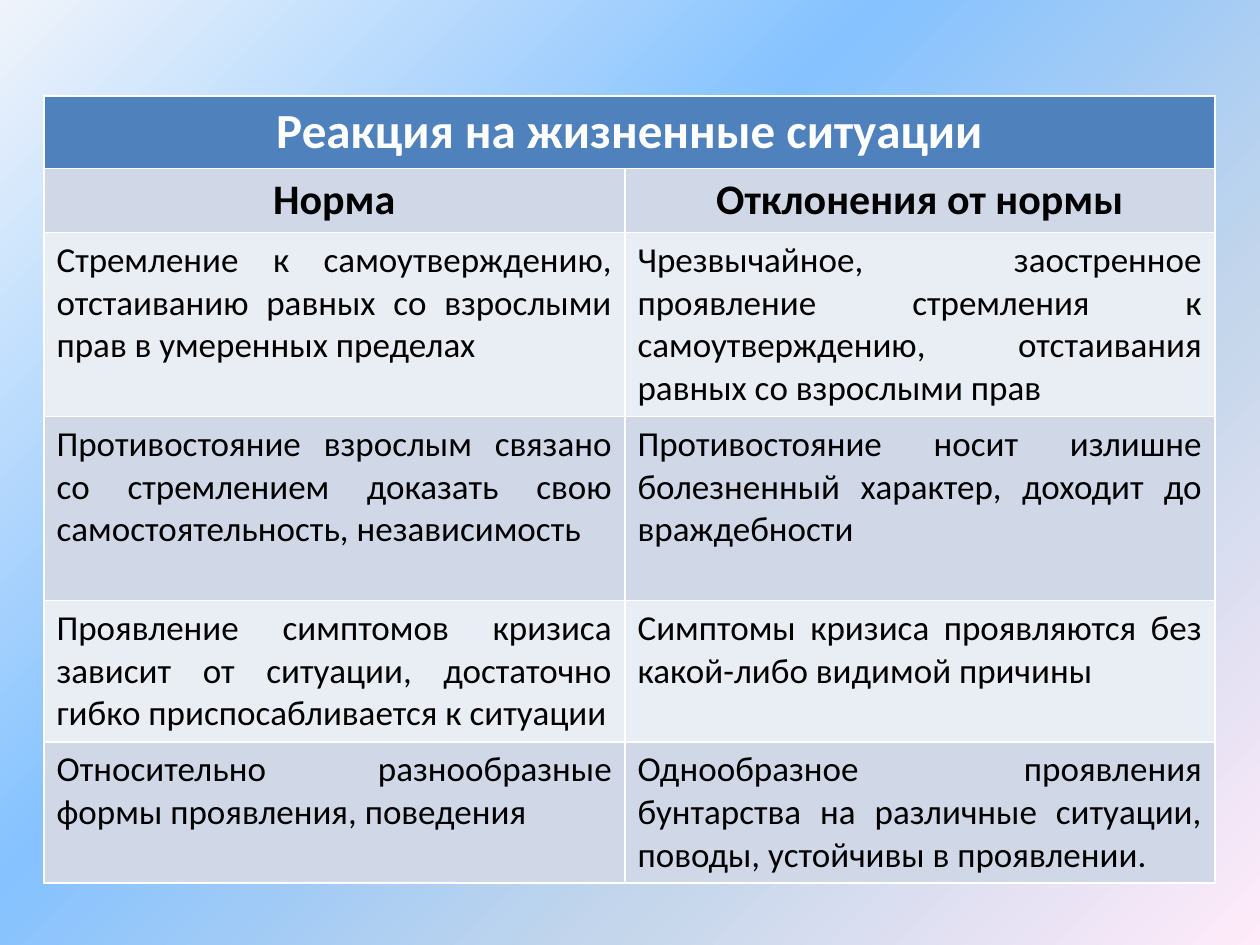
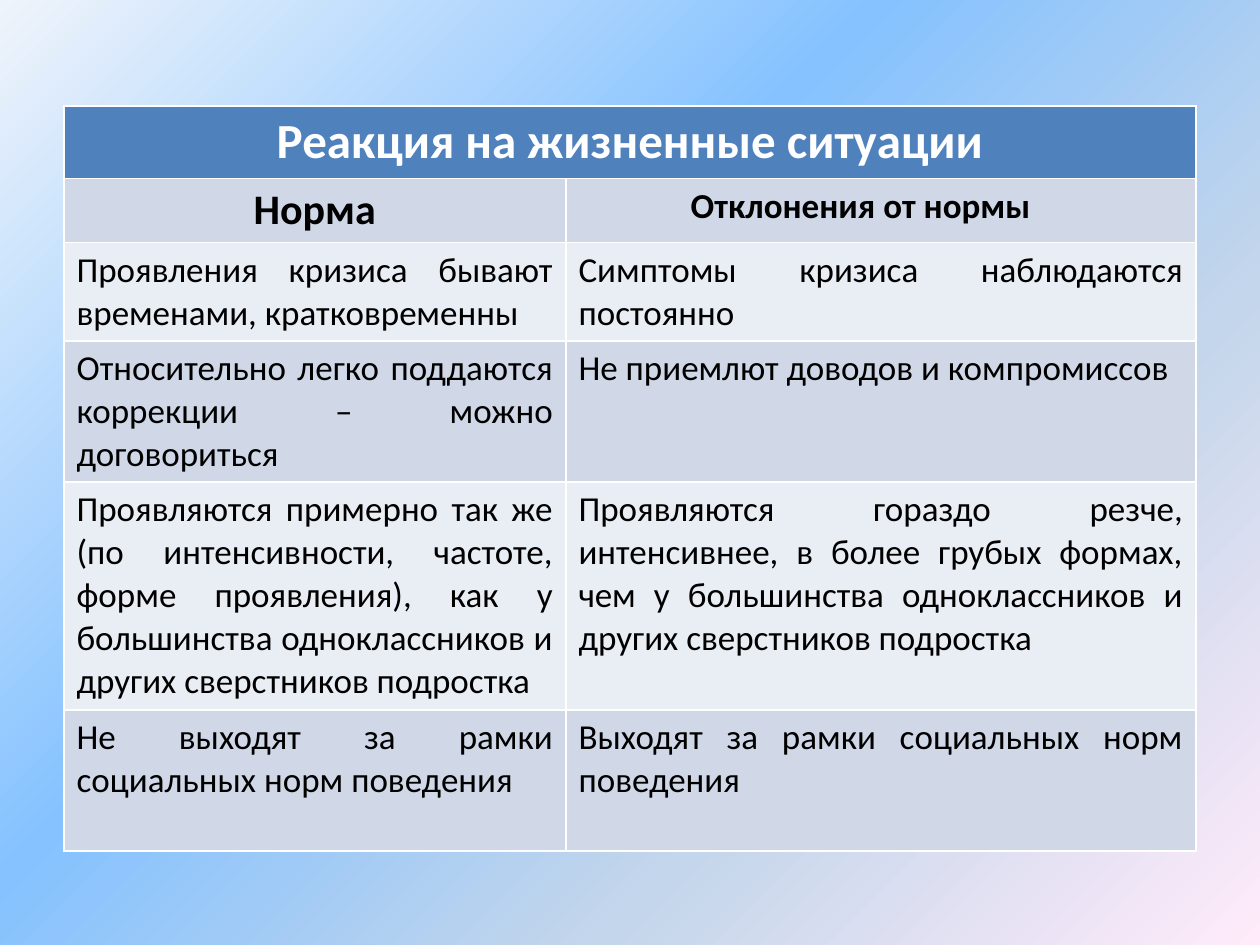
from dataclasses import dataclass

from lxml import etree
from pptx import Presentation
from pptx import util as u
from pptx.dml.color import RGBColor
from pptx.enum import text
from pptx.oxml import ns

PX_PER_INCH = 126
FONT = "Calibri"
WHITE = RGBColor(0xFF, 0xFF, 0xFF)
BLACK = RGBColor(0x00, 0x00, 0x00)
HEADER_BLUE = RGBColor(0x4F, 0x81, 0xBD)
BAND_DARK = RGBColor(0xD0, 0xD8, 0xE8)
BAND_LIGHT = RGBColor(0xE9, 0xED, 0xF4)
BACKGROUND_STOPS = (
    (0, RGBColor(0xEF, 0xF4, 0xFB)),
    (40, RGBColor(0x85, 0xC2, 0xFF)),
    (70, RGBColor(0xC4, 0xD6, 0xEB)),
    (100, RGBColor(0xFF, 0xEB, 0xFA)),
)
BACKGROUND_ANGLE = 315
TITLE = "Реакция на жизненные ситуации"
NORM = "Норма"
DEVIATION = "Отклонения от нормы"
CELL_MARGIN = 13


@dataclass(frozen=True)
class Comparison:
    left: int
    top: int
    columns: tuple[int, int]
    row_heights: tuple[int, ...]
    pairs: tuple[tuple[str, str], ...]
    deviation_size: int = 24
    deviation_margin: int = CELL_MARGIN


COMPARISONS = (
    Comparison(
        left=44,
        top=96,
        columns=(581, 590),
        row_heights=(72, 64, 184, 184, 141, 141),
        pairs=(
            ("Стремление к самоутверждению, отстаиванию равных со взрослыми "
             "прав в умеренных пределах",
             "Чрезвычайное, заостренное проявление стремления к "
             "самоутверждению, отстаивания равных со взрослыми прав"),
            ("Противостояние взрослым связано со стремлением доказать свою "
             "самостоятельность, независимость",
             "Противостояние носит излишне болезненный характер, доходит до "
             "враждебности"),
            ("Проявление симптомов кризиса зависит от ситуации, достаточно "
             "гибко приспосабливается к ситуации",
             "Симптомы кризиса проявляются без какой-либо видимой причины"),
            ("Относительно разнообразные формы проявления, поведения",
             "Однообразное проявления бунтарства на различные ситуации, "
             "поводы, устойчивы в проявлении."),
        ),
    ),
    Comparison(
        left=64,
        top=106,
        columns=(502, 630),
        row_heights=(72, 64, 98, 141, 228, 141),
        pairs=(
            ("Проявления кризиса бывают временами, кратковременны",
             "Симптомы кризиса наблюдаются постоянно"),
            ("Относительно легко поддаются коррекции – можно договориться",
             "Не приемлют доводов и компромиссов"),
            ("Проявляются примерно так же (по интенсивности, частоте, форме "
             "проявления), как у большинства одноклассников и других "
             "сверстников подростка",
             "Проявляются гораздо резче, интенсивнее, в более грубых формах, "
             "чем у большинства одноклассников и других сверстников подростка"),
            ("Не выходят за рамки социальных норм поведения",
             "Выходят за рамки социальных норм поведения"),
        ),
        deviation_size=20,
        deviation_margin=CELL_MARGIN + 40,
    ),
)


def px(length: int) -> u.Emu:
    return u.Emu(round(length * u.Inches(1) / PX_PER_INCH))


def paint_background(master) -> None:
    fill = master.background.fill
    fill.gradient()
    fill.gradient_angle = BACKGROUND_ANGLE
    stops = master.element.find(".//" + ns.qn("a:gsLst"))
    for stop in list(stops):
        stops.remove(stop)
    for percent, color in BACKGROUND_STOPS:
        stop = etree.SubElement(stops, ns.qn("a:gs"), pos=str(percent * 1000))
        etree.SubElement(stop, ns.qn("a:srgbClr"), val=str(color))


def write_cell(cell, words: str, *, fill: RGBColor, size: int = 20,
               color: RGBColor = BLACK, bold: bool = False,
               align=text.PP_ALIGN.JUSTIFY, margin_right: int = CELL_MARGIN) -> None:
    cell.fill.solid()
    cell.fill.fore_color.rgb = fill
    cell.margin_right = px(margin_right)
    para = cell.text_frame.paragraphs[0]
    para.alignment = align
    span = para.add_run()
    span.text = words
    span.font.name = FONT
    span.font.size = u.Pt(size)
    span.font.bold = bold
    span.font.color.rgb = color


def add_comparison(page, comparison: Comparison) -> None:
    frame = page.shapes.add_table(
        len(comparison.row_heights), len(comparison.columns),
        px(comparison.left), px(comparison.top),
        px(sum(comparison.columns)), px(sum(comparison.row_heights)))
    table = frame.table
    for column, width in zip(table.columns, comparison.columns):
        column.width = px(width)
    for row, height in zip(table.rows, comparison.row_heights):
        row.height = px(height)

    heading = dict(bold=True, align=text.PP_ALIGN.CENTER)
    table.cell(0, 0).merge(table.cell(0, 1))
    write_cell(table.cell(0, 0), TITLE, fill=HEADER_BLUE, size=28, color=WHITE, **heading)
    write_cell(table.cell(1, 0), NORM, fill=BAND_DARK, size=24, **heading)
    write_cell(table.cell(1, 1), DEVIATION, fill=BAND_DARK,
               size=comparison.deviation_size,
               margin_right=comparison.deviation_margin, **heading)
    for row, pair in enumerate(comparison.pairs, start=2):
        for column, words in enumerate(pair):
            write_cell(table.cell(row, column), words,
                       fill=BAND_DARK if row % 2 else BAND_LIGHT)


def main() -> None:
    deck = Presentation()
    deck.slide_width = u.Inches(10)
    deck.slide_height = u.Inches(7.5)
    paint_background(deck.slide_master)
    blank = deck.slide_layouts.get_by_name("Blank")
    for comparison in COMPARISONS:
        add_comparison(deck.slides.add_slide(blank), comparison)
    deck.save("out.pptx")


if __name__ == "__main__":
    main()
